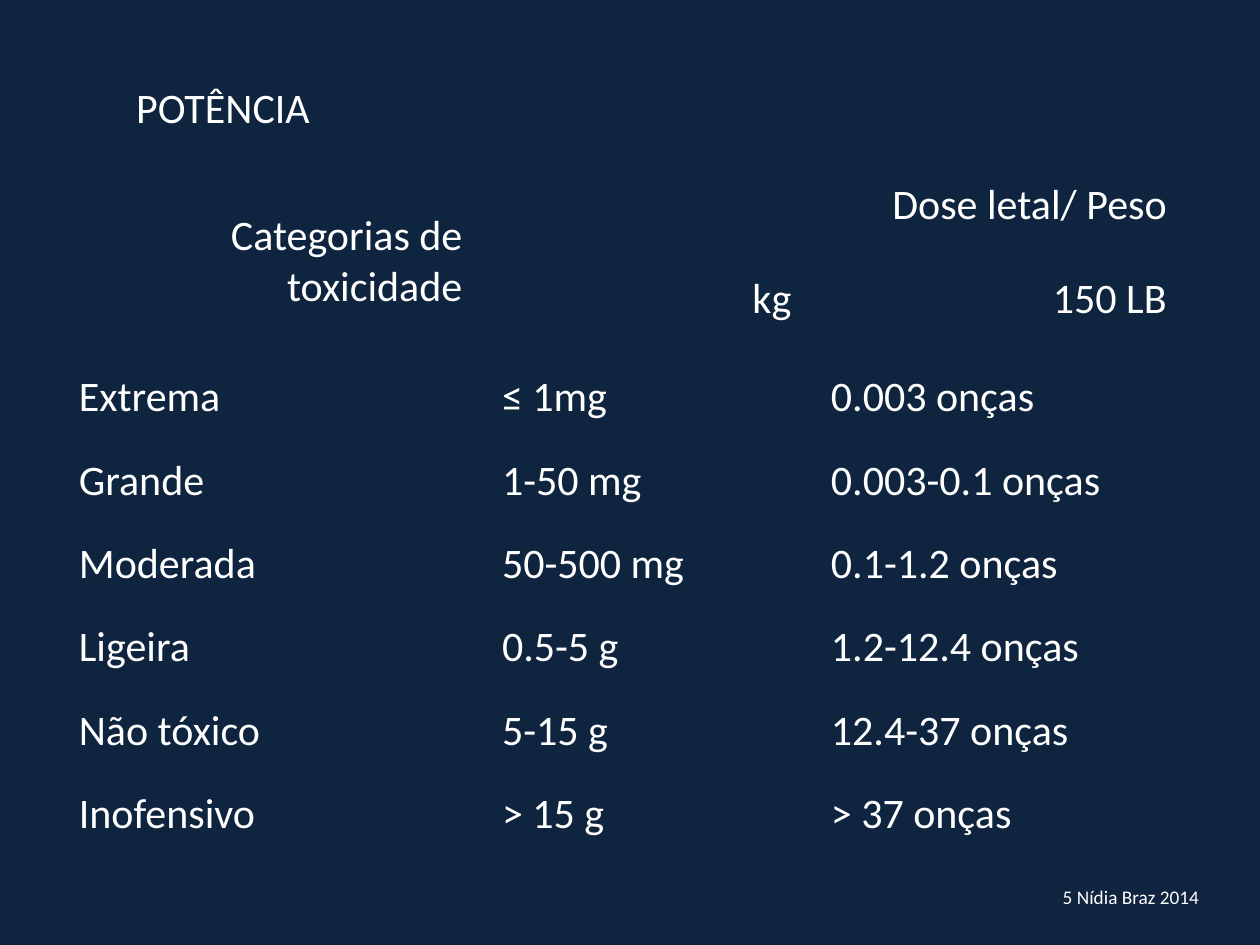
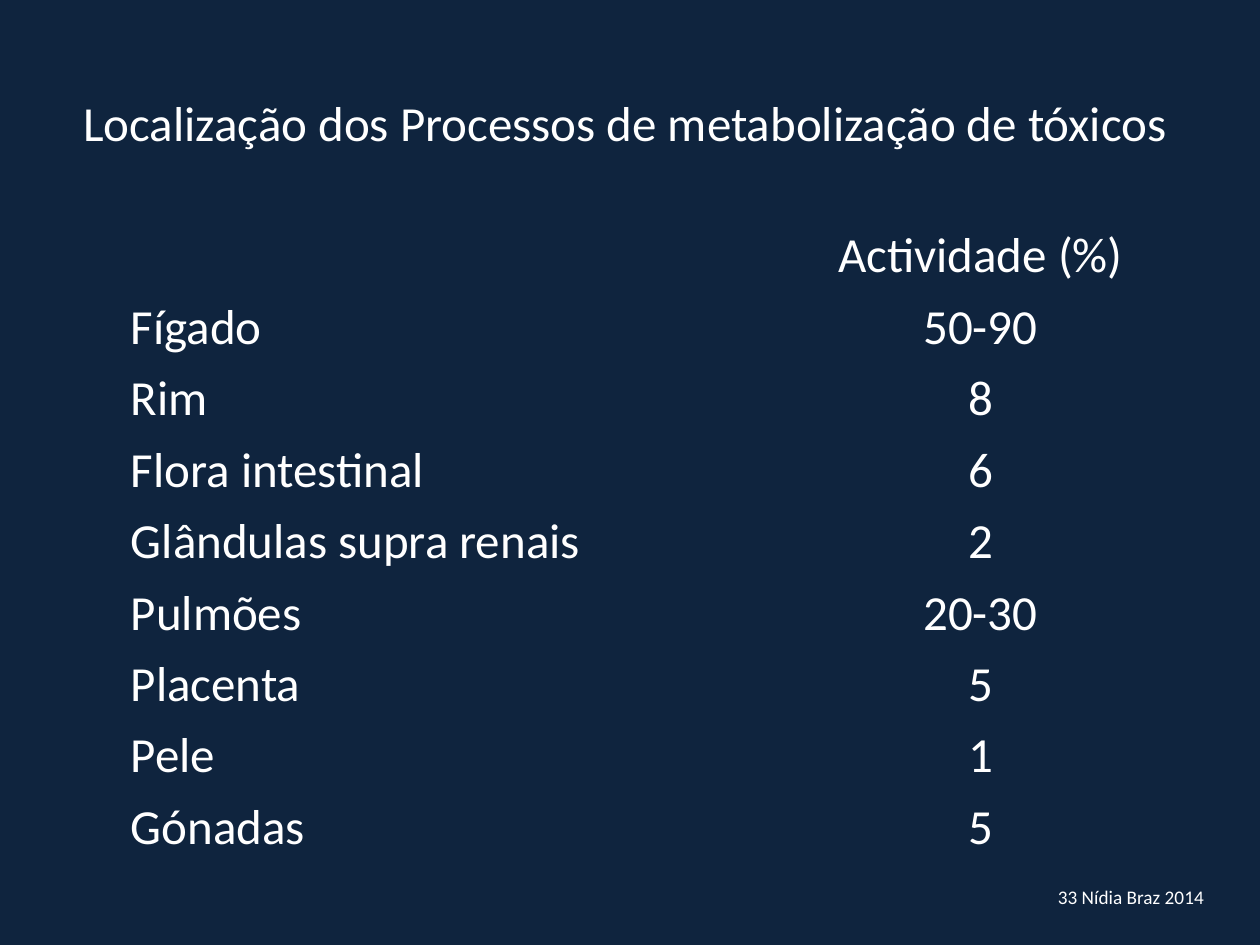
from dataclasses import dataclass

from pptx import Presentation
from pptx.dml.color import RGBColor
from pptx.enum import text
from pptx.util import Cm, Pt

LEFT, CENTER, RIGHT = text.PP_ALIGN.LEFT, text.PP_ALIGN.CENTER, text.PP_ALIGN.RIGHT
TOP, MIDDLE = text.MSO_ANCHOR.TOP, text.MSO_ANCHOR.MIDDLE


@dataclass(frozen=True)
class Theme:
    background: RGBColor = RGBColor(0x0F, 0x24, 0x3E)
    ink: RGBColor = RGBColor(0xFF, 0xFF, 0xFF)
    font: str = "Calibri"
    large: int = 28
    medium: int = 24
    small: int = 11
    plain_table: str = "{2D5ABB26-0587-4C30-8999-92F81FD0307C}"


THEME = Theme()

POTENCY = [
    ("Extrema", "≤ 1mg", "0.003 onças"),
    ("Grande", "1-50 mg", "0.003-0.1 onças"),
    ("Moderada", "50-500 mg", "0.1-1.2 onças"),
    ("Ligeira", "0.5-5 g", "1.2-12.4 onças"),
    ("Não tóxico", "5-15 g", "12.4-37 onças"),
    ("Inofensivo", "> 15 g", "> 37 onças"),
]

ACTIVITY = [
    ("", "Actividade (%)"),
    ("Fígado", "50-90"),
    ("Rim", "8"),
    ("Flora intestinal", "6"),
    ("Glândulas supra renais", "2"),
    ("Pulmões", "20-30"),
    ("Placenta", "5"),
    ("Pele", "1"),
    ("Gónadas", "5"),
]


def write(frame, words, size, align=LEFT):
    frame.text = words
    paragraph = frame.paragraphs[0]
    paragraph.alignment = align
    paragraph.font.name = THEME.font
    paragraph.font.size = Pt(size)
    paragraph.font.color.rgb = THEME.ink


def add_titled_slide(deck, title, box, size, align=LEFT):
    slide = deck.slides.add_slide(deck.slide_layouts[5])
    heading = slide.shapes.title
    heading.left, heading.top, heading.width, heading.height = map(Cm, box)
    frame = heading.text_frame
    frame.auto_size = text.MSO_AUTO_SIZE.NONE
    frame.vertical_anchor = TOP
    frame.word_wrap = True
    write(frame, title, size, align)
    return slide


def add_footer(slide, words):
    footer = slide.shapes.add_textbox(Cm(20.7), Cm(17.73), Cm(4.2), Cm(0.73))
    footer.text_frame.word_wrap = True
    write(footer.text_frame, words, THEME.small, CENTER)


def add_plain_table(slide, left, top, widths, heights):
    frame = slide.shapes.add_table(
        len(heights), len(widths), Cm(left), Cm(top), Cm(sum(widths)), Cm(sum(heights))
    )
    table = frame.table
    table.first_row = table.horz_banding = False
    table._tbl.tblPr.find("{*}tableStyleId").text = THEME.plain_table
    for column, width in zip(table.columns, widths):
        column.width = Cm(width)
    for row, height in zip(table.rows, heights):
        row.height = Cm(height)
    return table


def fill_cell(cell, words, size, align, anchor, side, edge):
    cell.fill.background()
    cell.vertical_anchor = anchor
    cell.margin_left = cell.margin_right = Cm(side)
    cell.margin_top = cell.margin_bottom = Cm(edge)
    write(cell.text_frame, words, size, align)


def build_potency(deck):
    slide = add_titled_slide(deck, "POTÊNCIA", (2.49, 1.52, 4.8, 1.27), THEME.medium)
    add_footer(slide, "5 Nídia Braz 2014")
    heights = [1.5, 1.6] + [1.68] * len(POTENCY)
    table = add_plain_table(slide, 1.19, 3.38, (8.53, 6.63, 7.57), heights)
    table.cell(0, 0).merge(table.cell(1, 0))
    table.cell(0, 1).merge(table.cell(0, 2))
    headings = [("Categorias de toxicidade", "Dose letal/ Peso", ""), ("", "kg", "150 LB")]
    for r, row in enumerate(headings + POTENCY):
        align = RIGHT if r < len(headings) else LEFT
        for c, words in enumerate(row):
            cell = table.cell(r, c)
            if not cell.is_spanned:
                fill_cell(cell, words, THEME.medium, align, MIDDLE, 0.4, 0.13)


def build_activity(deck):
    slide = add_titled_slide(
        deck,
        "Localização dos Processos de metabolização de tóxicos",
        (1.09, 1.73, 23.01, 2.21),
        THEME.large,
        CENTER,
    )
    add_footer(slide, "33 Nídia Braz 2014")
    table = add_plain_table(slide, 2.39, 4.45, (12.98, 8.79), [1.44] * len(ACTIVITY))
    for r, row in enumerate(ACTIVITY):
        for c, (words, align) in enumerate(zip(row, (LEFT, CENTER))):
            fill_cell(table.cell(r, c), words, THEME.large, align, TOP, 0.25, 0.11)


def main():
    deck = Presentation()
    deck.slide_width, deck.slide_height = Cm(25.4), Cm(19.05)
    backdrop = deck.slide_master.background.fill
    backdrop.solid()
    backdrop.fore_color.rgb = THEME.background
    build_potency(deck)
    build_activity(deck)
    deck.save("out.pptx")


if __name__ == "__main__":
    main()
